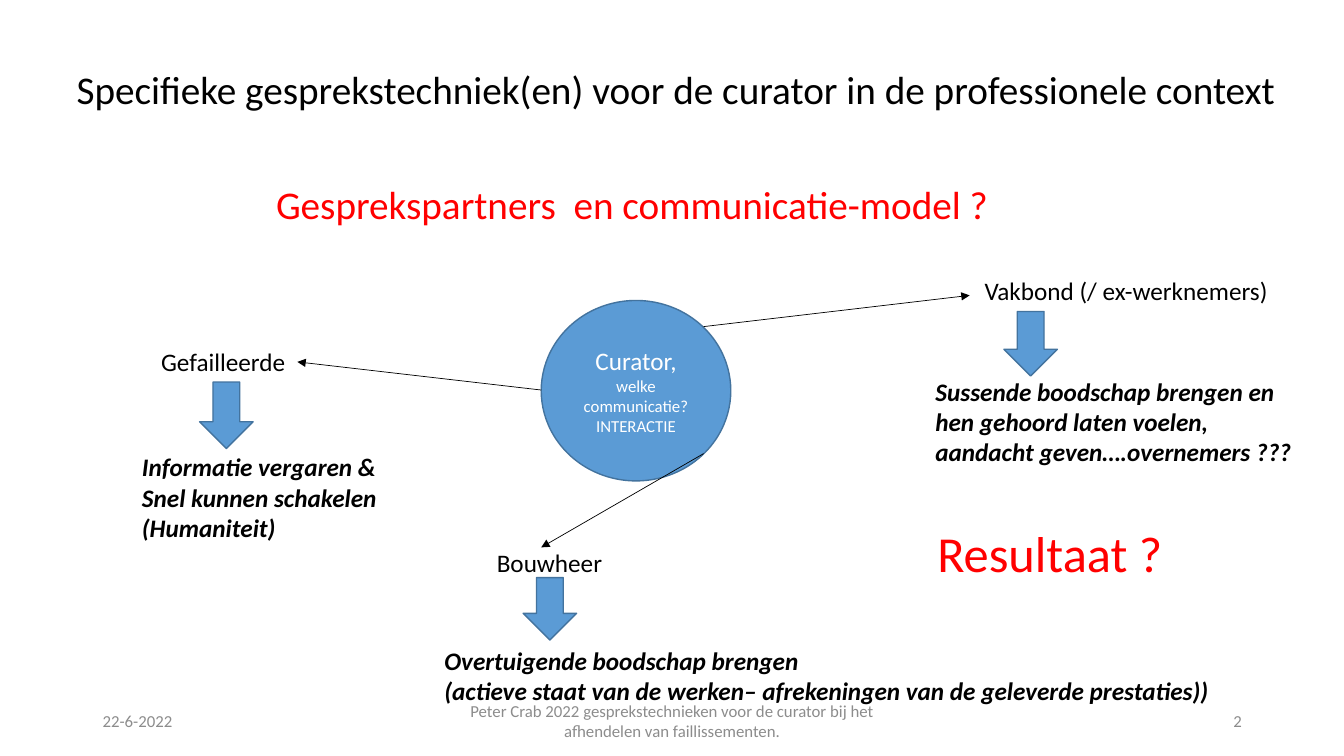
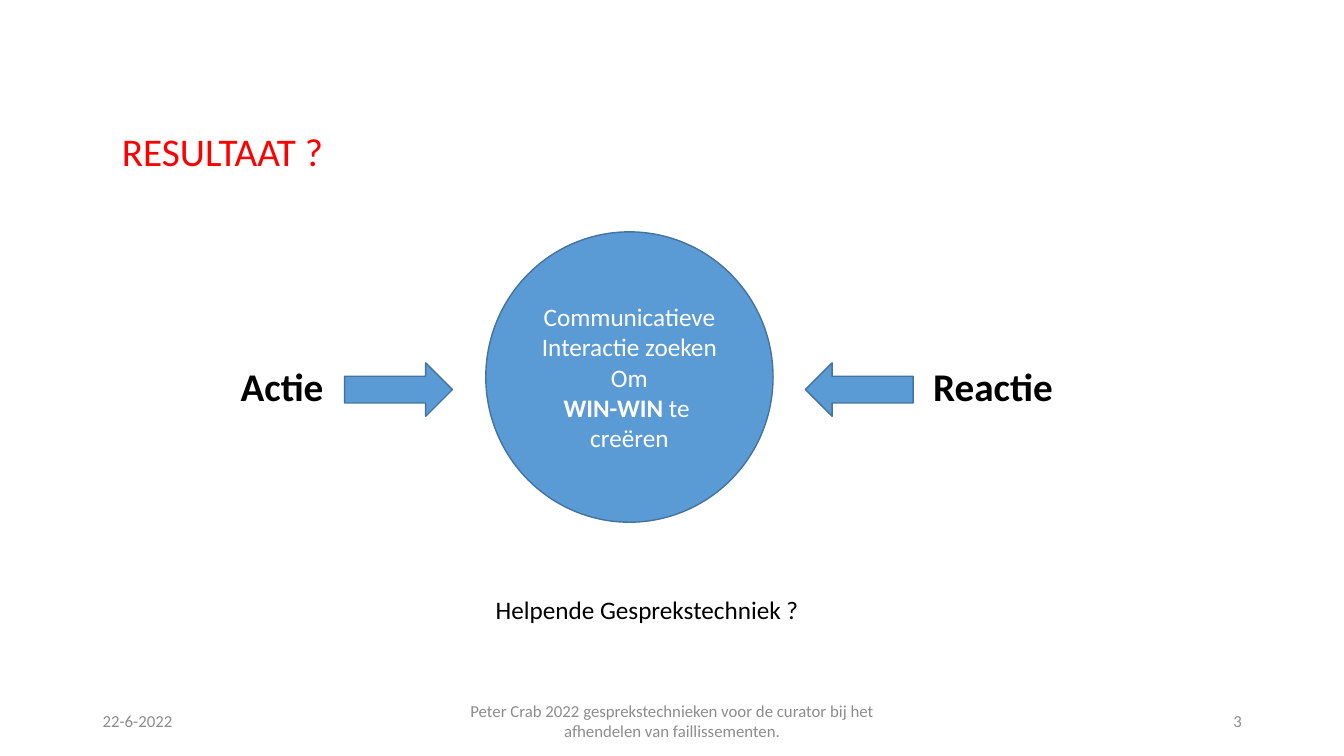
from lxml import etree
from pptx import Presentation
from pptx.dml.color import RGBColor
from pptx.enum.shapes import MSO_CONNECTOR, MSO_SHAPE
from pptx.enum.text import MSO_ANCHOR, MSO_AUTO_SIZE, PP_ALIGN
from pptx.oxml.ns import qn
from pptx.util import Pt

BLACK = RGBColor(0x00, 0x00, 0x00)
WHITE = RGBColor(0xFF, 0xFF, 0xFF)
RED = RGBColor(0xFF, 0x00, 0x00)
GREY = RGBColor(0x8C, 0x8C, 0x8C)
BLUE = RGBColor(0x5B, 0x9B, 0xD5)
DARK_BLUE = RGBColor(0x43, 0x73, 0x9E)

FONT = "Calibri"
BODY_SIZE, TITLE_SIZE, SMALL_SIZE = 18, 28, 12
ARROW_THICKNESS = 38.2

DATE = "22-6-2022"
FOOTER = "Peter Crab 2022 gesprekstechnieken voor de curator bij het afhendelen van faillissementen."

# Label, label place, arrow place and length, message, message place, connector ends
PARTNERS = [
    ("Gefailleerde", (108, 244.1, 104.4), (142.6, 272.9, 47.5),
     ["Informatie vergaren &", "Snel kunnen schakelen", "(Humaniteit)"],
     (94.3, 319, 184.3), (386.6, 278.6, 212.4, 258.5)),
    ("Vakbond (/ ex-werknemers)", (696.2, 193, 219.6), (717.1, 222.5, 46.1),
     ["Sussende boodschap brengen en", "hen gehoord laten voelen,",
      "aandacht geven….overnemers ???"],
     (661, 265, 272.2), (502.6, 233.3, 692.6, 211)),
    ("Bouwheer", (347.8, 387.4, 90.7), (373.7, 412.6, 44.6),
     ["Overtuigende boodschap brengen",
      "(actieve staat van de werken– afrekeningen van de geleverde prestaties))"],
     (310.3, 457.2, 568.1), (502.6, 324, 386.6, 391)),
]


def write(frame, paragraphs, size=BODY_SIZE, color=BLACK, bold=False, italic=False,
          align=PP_ALIGN.LEFT, anchor=MSO_ANCHOR.TOP, wrap=True):
    """Fill a frame; a paragraph is a string or a list of (text, size, bold) runs."""
    frame.word_wrap = wrap
    frame.vertical_anchor = anchor
    for index, content in enumerate(paragraphs):
        paragraph = frame.paragraphs[0] if index == 0 else frame.add_paragraph()
        paragraph.alignment = align
        runs = [(content, size, bold)] if isinstance(content, str) else content
        for text, run_size, run_bold in runs:
            run = paragraph.add_run()
            run.text = text
            run.font.name = FONT
            run.font.size = Pt(run_size)
            run.font.bold = run_bold
            run.font.italic = italic
            run.font.color.rgb = color


def place(shape, left, top, width, height):
    shape.left, shape.top = Pt(left), Pt(top)
    shape.width, shape.height = Pt(width), Pt(height)


def fitted_height(line_count, size):
    return round(line_count * size * 1.22 + 7.2, 1)


def add_label(slide, position, lines, size=BODY_SIZE, **text_format):
    """Add a text box that is as high as its lines and does not wrap."""
    left, top, width = position
    label = slide.shapes.add_textbox(
        Pt(left), Pt(top), Pt(width), Pt(fitted_height(len(lines), size)))
    write(label.text_frame, lines, size=size, wrap=False, **text_format)
    label.text_frame.auto_size = MSO_AUTO_SIZE.SHAPE_TO_FIT_TEXT


def add_title(slide, text, position, color=BLACK):
    title = slide.shapes.title
    place(title, *position, fitted_height(1, TITLE_SIZE))
    write(title.text_frame, [text], size=TITLE_SIZE, color=color, wrap=False)
    title.text_frame.auto_size = MSO_AUTO_SIZE.SHAPE_TO_FIT_TEXT


def add_blue_shape(slide, kind, left, top, width, height):
    shape = slide.shapes.add_shape(kind, Pt(left), Pt(top), Pt(width), Pt(height))
    shape.shadow.inherit = False
    shape.fill.solid()
    shape.fill.fore_color.rgb = BLUE
    shape.line.color.rgb = DARK_BLUE
    shape.line.width = Pt(1)
    return shape


def add_circle(slide, bounds, paragraphs, size=BODY_SIZE):
    circle = add_blue_shape(slide, MSO_SHAPE.OVAL, *bounds)
    write(circle.text_frame, paragraphs, size=size, color=WHITE,
          align=PP_ALIGN.CENTER, anchor=MSO_ANCHOR.MIDDLE)


def add_arrow_line(slide, ends):
    connector = slide.shapes.add_connector(
        MSO_CONNECTOR.STRAIGHT, *(Pt(value) for value in ends))
    connector.line.color.rgb = BLACK
    connector.line.width = Pt(0.5)
    line = connector.line._get_or_add_ln()
    etree.SubElement(line, qn("a:tailEnd"), type="triangle")
    etree.SubElement(line.getparent(), qn("a:effectLst"))


def add_footer(slide, number):
    parts = [
        (DATE, 66.2, 216, PP_ALIGN.LEFT),
        (FOOTER, 318.2, 324, PP_ALIGN.CENTER),
        (str(number), 678.2, 216, PP_ALIGN.RIGHT),
    ]
    for text, left, width, align in parts:
        box = slide.shapes.add_textbox(Pt(left), Pt(500.4), Pt(width), Pt(28.8))
        write(box.text_frame, [text], size=SMALL_SIZE, color=GREY,
              align=align, anchor=MSO_ANCHOR.MIDDLE)


def build_partners(slide):
    add_title(slide, "Specifieke gesprekstechniek(en) voor de curator in de professionele context",
              (47.5, 43.2, 886.3))
    add_circle(slide, (386.6, 214.6, 135.4, 128.9), [
        [("Curator, ", BODY_SIZE, False), ("welke communicatie?", SMALL_SIZE, False)],
        "INTERACTIE",
    ], size=SMALL_SIZE)
    for name, name_place, arrow, message, message_place, ends in PARTNERS:
        add_arrow_line(slide, ends)
        add_label(slide, name_place, [name])
        add_label(slide, message_place, message, bold=True, italic=True)
        left, top, length = arrow
        add_blue_shape(slide, MSO_SHAPE.DOWN_ARROW, left, top, ARROW_THICKNESS, length)
    add_label(slide, (662.4, 369.4, 176.4), ["Resultaat ?"], size=36, color=RED)
    add_label(slide, (190.1, 125.3, 529.2), ["Gesprekspartners  en communicatie-model ?"],
              size=TITLE_SIZE, color=RED)


def build_result(slide):
    add_title(slide, "RESULTAAT ?", (79.9, 87.1, 159.8), color=RED)
    add_circle(slide, (347, 165.6, 205.2, 207.4), [
        "Communicatieve Interactie zoeken",
        "Om",
        [("WIN-WIN ", BODY_SIZE, True), ("te ", BODY_SIZE, False)],
        "creëren",
    ])
    sides = [
        ("Actie", 164.9, 74.9, MSO_SHAPE.RIGHT_ARROW, 246.2),
        ("Reactie", 659.5, 101.5, MSO_SHAPE.LEFT_ARROW, 575.3),
    ]
    for name, left, width, arrow, arrow_left in sides:
        add_label(slide, (left, 254.9, width), [name], size=TITLE_SIZE, bold=True)
        add_blue_shape(slide, arrow, arrow_left, 259.2, 77, ARROW_THICKNESS)
    add_label(slide, (347, 421.2, 237.6), ["Helpende Gesprekstechniek ?"])


def main():
    presentation = Presentation()
    presentation.slide_width, presentation.slide_height = Pt(960), Pt(540)
    title_only = presentation.slide_layouts[5]
    for number, build in enumerate((build_partners, build_result), start=2):
        slide = presentation.slides.add_slide(title_only)
        build(slide)
        add_footer(slide, number)
    presentation.save("out.pptx")


if __name__ == "__main__":
    main()
